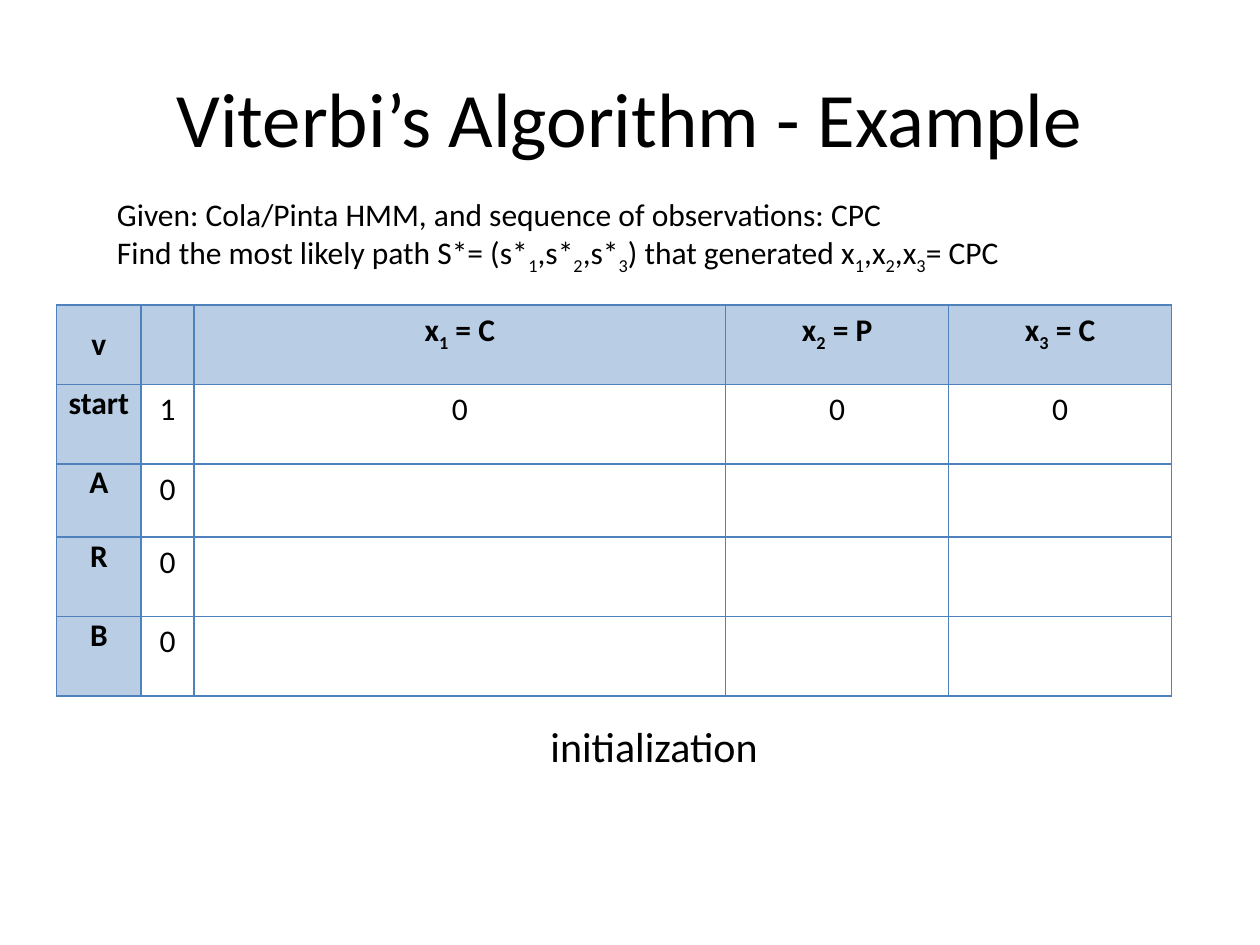
from dataclasses import dataclass

from lxml import etree
from pptx import Presentation
from pptx import util as u
from pptx.dml.color import RGBColor
from pptx.enum import text
from pptx.oxml import ns

WIDTH, HEIGHT = 10, 7.5
FONT = "Calibri"
BLACK, WHITE, HEADER, BORDER = "000000", "FFFFFF", "B9CDE5", "4F81BD"

COLUMNS = [0.67, 0.42, 4.22, 1.77, 1.77]
ROWS = [0.63, 0.63, 0.58, 0.63, 0.63]
SCORES = [
    ["v", "", "x_1 = C", "x_2 = P", "x_3 = C"],
    ["start", "1", "0", "0", "0"],
    ["A", "0", "", "", ""],
    ["R", "0", "", "", ""],
    ["B", "0", "", "", ""],
]


@dataclass
class Box:
    """Place and size as shares of the slide."""
    left: float
    top: float
    width: float
    height: float

    def emu(self) -> list[int]:
        return [u.Inches(self.left * WIDTH), u.Inches(self.top * HEIGHT),
                u.Inches(self.width * WIDTH), u.Inches(self.height * HEIGHT)]


@dataclass
class Note:
    box: Box
    lines: list[str]
    size: int


NOTES = [
    Note(Box(0.083, 0.2, 0.735, 0.095),
         ["Given: Cola/Pinta HMM, and sequence of observations: CPC",
          "Find the most likely path S*= (s*_1,s*_2,s*_3) that generated x_1,x_2,x_3= CPC"],
         18),
    Note(Box(0.427, 0.756, 0.187, 0.067), ["initialization"], 24),
]


def colour(value: str) -> RGBColor:
    return RGBColor.from_string(value)


def write(p, marked: str, size: int, bold: bool = False) -> None:
    """Fill a paragraph; an underscore lowers the one character after it."""
    first, *rest = marked.split("_")
    pieces = [(first, False)]
    for part in rest:
        pieces += [(part[0], True), (part[1:], False)]
    for words, lowered in pieces:
        if not words:
            continue
        r = p.add_run()
        r.text = words
        r.font.size, r.font.name, r.font.bold = u.Pt(size), FONT, bold
        r.font.color.rgb = colour(BLACK)
        if lowered:
            r.font._element.set("baseline", "-25000")


def add_borders(cell) -> None:
    tc_pr = cell._tc.get_or_add_tcPr()
    for i, side in enumerate(("lnL", "lnR", "lnT", "lnB")):
        ln = etree.Element(ns.qn(f"a:{side}"), w=str(u.Pt(1)))
        fill = etree.SubElement(ln, ns.qn("a:solidFill"))
        etree.SubElement(fill, ns.qn("a:srgbClr"), val=BORDER)
        tc_pr.insert(i, ln)


def add_scores(slide, box: Box) -> None:
    frame = slide.shapes.add_table(len(ROWS), len(COLUMNS), *box.emu())
    table = frame.table
    for column, width in zip(table.columns, COLUMNS):
        column.width = u.Inches(width)
    for row, height in zip(table.rows, ROWS):
        row.height = u.Inches(height)
    for i, labels in enumerate(SCORES):
        for j, label in enumerate(labels):
            cell = table.cell(i, j)
            heading = i == 0 or j == 0
            cell.fill.solid()
            cell.fill.fore_color.rgb = colour(HEADER if heading else WHITE)
            add_borders(cell)
            if j == 0:
                cell.margin_left = cell.margin_right = 0
                cell.margin_top = cell.margin_bottom = 0
            p = cell.text_frame.paragraphs[0]
            p.alignment = text.PP_ALIGN.CENTER
            write(p, label, 18, heading)
    table.cell(0, 0).vertical_anchor = text.MSO_ANCHOR.MIDDLE


def add_note(slide, note: Note) -> None:
    tf = slide.shapes.add_textbox(*note.box.emu()).text_frame
    tf.word_wrap = False
    tf.auto_size = text.MSO_AUTO_SIZE.SHAPE_TO_FIT_TEXT
    for i, line in enumerate(note.lines):
        p = tf.add_paragraph() if i else tf.paragraphs[0]
        write(p, line, note.size)


def set_title(slide, words: str, box: Box) -> None:
    title = slide.shapes.title
    title.left, title.top, title.width, title.height = box.emu()
    tf = title.text_frame
    tf.vertical_anchor = text.MSO_ANCHOR.MIDDLE
    p = tf.paragraphs[0]
    p.alignment = text.PP_ALIGN.CENTER
    write(p, words, 44)


def main() -> None:
    prs = Presentation()
    prs.slide_width, prs.slide_height = u.Inches(WIDTH), u.Inches(HEIGHT)
    slide = prs.slides.add_slide(prs.slide_layouts.get_by_name("Title Only"))
    set_title(slide, "Viterbi’s Algorithm - Example", Box(0.05, 0.04, 0.9, 1 / 6))
    add_scores(slide, Box(0.045, 0.323, 0.883, 0.411))
    for note in NOTES:
        add_note(slide, note)
    prs.save("out.pptx")


if __name__ == "__main__":
    main()
